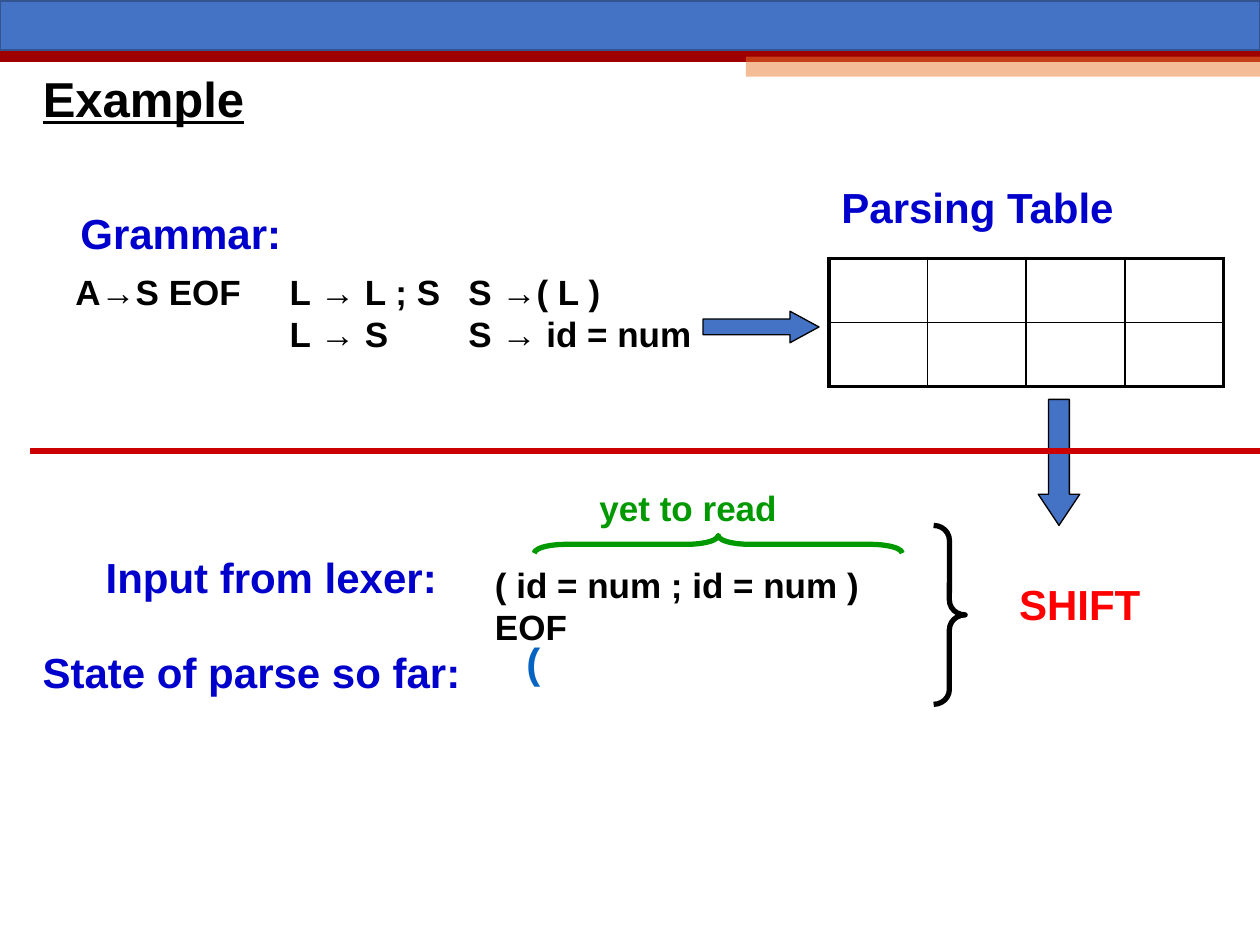
from lxml.etree import SubElement
from pptx import Presentation
from pptx.dml.color import RGBColor
from pptx.enum.shapes import MSO_CONNECTOR, MSO_SHAPE
from pptx.enum.text import MSO_ANCHOR, MSO_AUTO_SIZE, PP_ALIGN
from pptx.oxml.ns import qn
from pptx.util import Inches, Pt

BLACK = RGBColor(0x00, 0x00, 0x00)
BLUE = RGBColor(0x44, 0x72, 0xC4)
BAND_EDGE = RGBColor(0x32, 0x54, 0x91)
DARK_RED = RGBColor(0x9E, 0x00, 0x00)
ORANGE = RGBColor(0xED, 0x7D, 0x31)
HEADING_BLUE = RGBColor(0x00, 0x00, 0xCC)
STACK_BLUE = RGBColor(0x05, 0x63, 0xC1)
GREEN = RGBColor(0x00, 0x99, 0x00)
DIVIDER_RED = RGBColor(0xCC, 0x00, 0x00)
RED = RGBColor(0xFF, 0x00, 0x00)


class SlideBuilder:
    font_name = "Arial"
    thin, thick = 1, 2.25

    def __init__(self, slide):
        self.slide = slide

    def format_font(self, font, size, color, **extra):
        values = {"name": self.font_name, "size": Pt(size), "bold": True, **extra}
        for name, value in values.items():
            setattr(font, name, value)
        font.color.rgb = color

    def title(self, text, box):
        shape = self.slide.shapes.title
        for name, value in zip(("left", "top", "width", "height"), box):
            setattr(shape, name, Inches(value))
        shape.text_frame.vertical_anchor = MSO_ANCHOR.MIDDLE
        shape.text_frame.text = text
        paragraph = shape.text_frame.paragraphs[0]
        paragraph.alignment = PP_ALIGN.LEFT
        paragraph.line_spacing = 0.9
        self.format_font(paragraph.runs[0].font, 28, BLACK, underline=True)

    def text(self, lines, box, size=20, color=BLACK, wrap=False):
        shape = self.slide.shapes.add_textbox(*map(Inches, box))
        frame = shape.text_frame
        frame.text = lines
        frame.word_wrap = wrap
        frame.auto_size = MSO_AUTO_SIZE.NONE if wrap else MSO_AUTO_SIZE.SHAPE_TO_FIT_TEXT
        for paragraph in frame.paragraphs:
            self.format_font(paragraph.runs[0].font, size, color)

    def heading(self, text, box, color=HEADING_BLUE):
        self.text(text, box, 24, color)

    def shape(self, kind, box, fill=None, line=None, width=0.75,
              adjustments=(), rotation=0, opacity=None):
        shape = self.slide.shapes.add_shape(kind, *map(Inches, box))
        shape.shadow.inherit = False
        shape.rotation = rotation
        for index, value in enumerate(adjustments):
            shape.adjustments[index] = value
        if fill is None:
            shape.fill.background()
        else:
            shape.fill.solid()
            shape.fill.fore_color.rgb = fill
        if opacity is not None:
            color = shape._element.spPr.find(qn("a:solidFill")).find(qn("a:srgbClr"))
            SubElement(color, qn("a:alpha"), val=str(int(opacity * 100000)))
        if line is None:
            shape.line.fill.background()
        else:
            shape.line.color.rgb = line
            shape.line.width = Pt(width)

    def horizontal_line(self, left, right, top, color, width):
        line = self.slide.shapes.add_connector(
            MSO_CONNECTOR.STRAIGHT, *map(Inches, (left, top, right, top)))
        line.line.color.rgb = color
        line.line.width = Pt(width)
        SubElement(line._element.spPr, qn("a:effectLst"))

    def empty_table(self, rows, columns, box):
        """Draw a blank grid with a thick frame and thin inner rules."""
        frame = self.slide.shapes.add_table(rows, columns, *map(Inches, box))
        table = frame.table
        for row in range(rows):
            for column in range(columns):
                cell = table.cell(row, column)
                on_frame = {"a:lnL": column == 0, "a:lnR": column == columns - 1,
                            "a:lnT": row == 0, "a:lnB": row == rows - 1}
                properties = cell._tc.get_or_add_tcPr()
                for tag, outer in on_frame.items():
                    width = Pt(self.thick if outer else self.thin)
                    border = SubElement(properties, qn(tag), w=str(int(width)))
                    fill = SubElement(border, qn("a:solidFill"))
                    SubElement(fill, qn("a:srgbClr"), val=str(BLACK))
                cell.fill.background()


def main():
    presentation = Presentation()
    presentation.slide_width = Inches(10)
    presentation.slide_height = Inches(7.5)
    title_only = presentation.slide_layouts[5]
    builder = SlideBuilder(presentation.slides.add_slide(title_only))

    # Header band
    builder.horizontal_line(0, 10, 0.44, DARK_RED, 7.5)
    builder.shape(MSO_SHAPE.RECTANGLE, (5.92, 0.45, 4.08, 0.16), ORANGE, opacity=0.5)
    builder.shape(MSO_SHAPE.RECTANGLE, (0, 0.01, 10, 0.39), BLUE, BAND_EDGE, 1)
    builder.title("Example", (0.24, 0.45, 9, 0.71))

    # Grammar and its parsing table
    builder.heading("Grammar:", (0.54, 1.6, 1.8, 0.5))
    builder.text("A→S EOF", (0.5, 2.1, 1.53, 0.44))
    builder.text("L → L ; S\nL → S", (2.2, 2.1, 1.4, 0.77))
    builder.text("S →( L )\nS → id = num", (3.62, 2.1, 2.03, 0.77))
    builder.shape(MSO_SHAPE.RIGHT_ARROW, (5.58, 2.47, 0.92, 0.25), BLUE, BLACK,
                  adjustments=(0.5, 0.92))
    builder.heading("Parsing Table", (6.58, 1.39, 2.39, 0.5))
    builder.empty_table(2, 4, (6.58, 2.05, 3.13, 1.02))

    # Parser state and the chosen action
    builder.heading("Input from lexer:", (0.74, 4.33, 2.83, 0.5))
    builder.text("( id = num ; id = num ) EOF", (3.83, 4.42, 3.73, 0.43), wrap=True)
    builder.heading("State of parse so far:", (0.24, 5.08, 3.52, 0.5))
    builder.heading("(", (4.08, 5, 0.31, 0.5), STACK_BLUE)
    builder.text("yet to read", (4.66, 3.81, 1.7, 0.43), color=GREEN, wrap=True)
    builder.shape(MSO_SHAPE.RIGHT_BRACE, (5.63, 2.86, 0.14, 2.92), line=GREEN, width=3,
                  adjustments=(1.8, 0.5), rotation=270)
    builder.shape(MSO_SHAPE.RIGHT_BRACE, (7.41, 4.17, 0.25, 1.42), line=BLACK, width=3,
                  adjustments=(0.47, 0.5))
    builder.shape(MSO_SHAPE.DOWN_ARROW, (8.24, 3.17, 0.33, 1), BLUE, BLACK,
                  adjustments=(0.5, 0.75))
    builder.horizontal_line(0.24, 10.24, 3.58, DIVIDER_RED, 3)
    builder.heading("SHIFT", (7.99, 4.54, 1.16, 0.5), RED)

    presentation.save("out.pptx")


if __name__ == "__main__":
    main()
